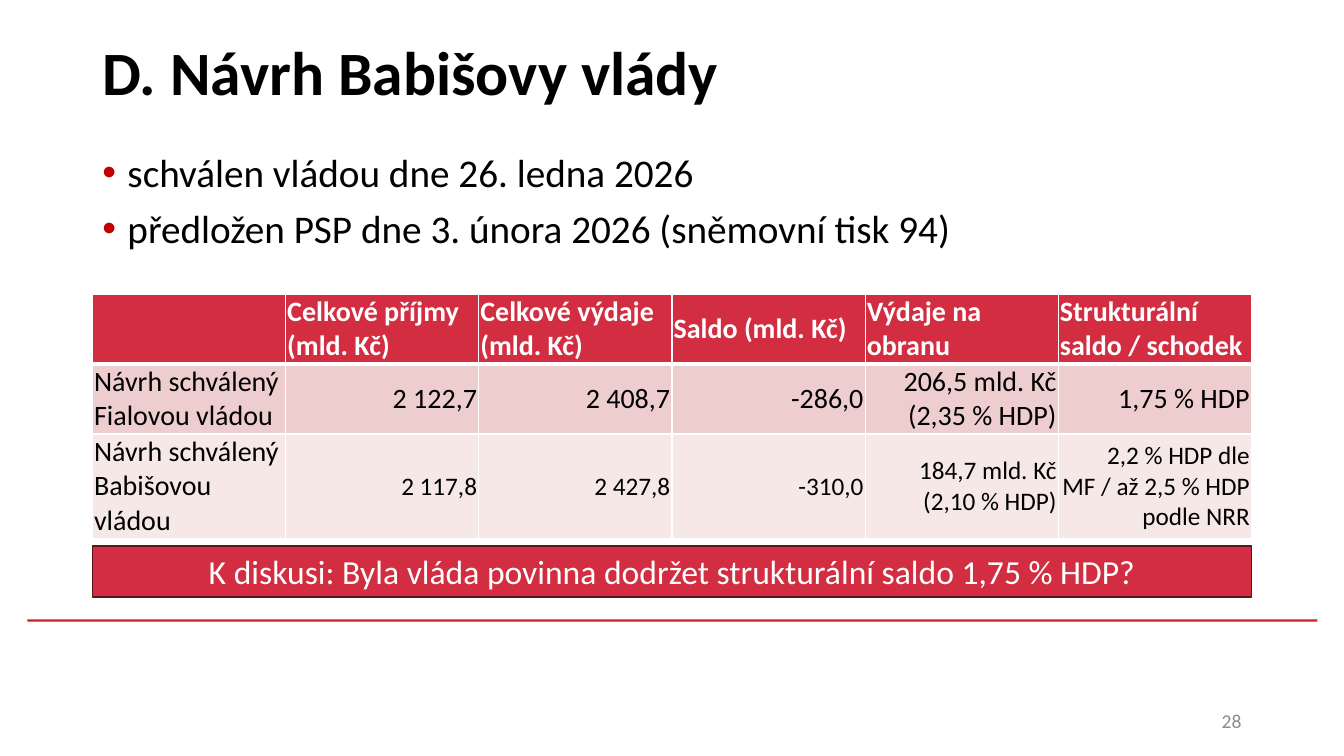
from dataclasses import dataclass

from lxml import etree
from pptx import Presentation
from pptx.dml.color import RGBColor
from pptx.enum import shapes, text
from pptx.oxml import ns
from pptx.util import Pt

FONT = "Calibri"
RED, WHITE, BLACK = "D22D40", "FFFFFF", "000000"
LEFT, WIDTH = 66, 828
ALIGN = text.PP_ALIGN
ANCHOR = text.MSO_ANCHOR


@dataclass
class Row:
    cells: list[str]
    height: float
    fill: str
    size: float = 20
    color: str = BLACK
    bold: bool = False
    align: ALIGN = ALIGN.RIGHT


@dataclass
class Bar:
    top: float
    height: float
    fill: str
    left: float = LEFT
    width: float = WIDTH
    line: str = ""


ROWS = [
    Row(["", "Celkové příjmy (mld. Kč)", "Celkové výdaje (mld. Kč)",
         "Saldo (mld. Kč)", "Výdaje na obranu",
         "Strukturální saldo / schodek"],
        50, RED, color=WHITE, bold=True, align=ALIGN.LEFT),
    Row(["Návrh schválený Fialovou vládou", "2 122,7", "2 408,7", "-286,0",
         "206,5 mld. Kč (2,35 % HDP)", "1,75 % HDP"], 50, "EECDCF"),
    Row(["Návrh schválený Babišovou vládou", "2 117,8", "2 427,8", "-310,0",
         "184,7 mld. Kč (2,10 % HDP)",
         "2,2 % HDP dle MF / až 2,5 % HDP podle NRR"],
        75, "F7E8E8", size=18),
]
RULE = Bar(442.5, 1.5, "CD1F21", left=19.5, width=921.5)
ASK = Bar(390, 36.5, RED, line="5C141C")


def rgb(code: str) -> RGBColor:
    return RGBColor.from_string(code)


def bullet(para) -> None:
    props = para._p.get_or_add_pPr()
    props.set("marL", str(Pt(18)))
    props.set("indent", str(-Pt(18)))
    color = etree.SubElement(props, ns.qn("a:buClr"))
    etree.SubElement(color, ns.qn("a:srgbClr"), val="C00000")
    etree.SubElement(props, ns.qn("a:buFont"), typeface="Arial")
    etree.SubElement(props, ns.qn("a:buChar"), char="•")


def write(frame, words: str, *, size: float, color: str = BLACK,
          bold: bool = False, align: ALIGN = ALIGN.LEFT,
          dots: bool = False, gap: float = 0, pitch: float = 1) -> None:
    frame.word_wrap = True
    for i, line in enumerate(words.split("\n")):
        para = frame.add_paragraph() if i else frame.paragraphs[0]
        para.alignment = align
        para.line_spacing = pitch
        para.space_before = Pt(gap if i else 0)
        if dots:
            bullet(para)
        run = para.add_run()
        run.text = line
        font = run.font
        font.name, font.size, font.bold = FONT, Pt(size), bold
        font.color.rgb = rgb(color)


def add_box(slide, left: float, top: float, width: float, height: float,
            anchor: ANCHOR = ANCHOR.MIDDLE):
    box = slide.shapes.add_textbox(Pt(left), Pt(top), Pt(width), Pt(height))
    box.text_frame.vertical_anchor = anchor
    return box.text_frame


def add_bar(slide, bar: Bar):
    shape = slide.shapes.add_shape(
        shapes.MSO_SHAPE.RECTANGLE, Pt(bar.left), Pt(bar.top),
        Pt(bar.width), Pt(bar.height))
    shape.shadow.inherit = False
    shape.fill.solid()
    shape.fill.fore_color.rgb = rgb(bar.fill)
    if bar.line:
        shape.line.color.rgb = rgb(bar.line)
        shape.line.width = Pt(1)
    else:
        shape.line.fill.background()
    return shape.text_frame


def edge(cell, top: float, base: float) -> None:
    props = cell._tc.get_or_add_tcPr()
    sides = {"L": 1, "R": 1, "T": top, "B": base}
    for i, (side, width) in enumerate(sides.items()):
        line = etree.Element(ns.qn(f"a:ln{side}"), w=str(Pt(width)))
        fill = etree.SubElement(line, ns.qn("a:solidFill"))
        etree.SubElement(fill, ns.qn("a:srgbClr"), val=WHITE)
        props.insert(i, line)


def add_grid(slide, rows: list[Row], top: float) -> None:
    count = len(rows[0].cells)
    height = sum(row.height for row in rows)
    table = slide.shapes.add_table(
        len(rows), count, Pt(LEFT), Pt(top), Pt(WIDTH), Pt(height)).table
    for col in table.columns:
        col.width = Pt(WIDTH / count)
    for r, row in enumerate(rows):
        table.rows[r].height = Pt(row.height)
        for c, words in enumerate(row.cells):
            cell = table.cell(r, c)
            cell.fill.solid()
            cell.fill.fore_color.rgb = rgb(row.fill)
            edge(cell, 3 if r == 1 else 1, 3 if r == 0 else 1)
            cell.vertical_anchor = ANCHOR.MIDDLE
            cell.margin_left = cell.margin_right = Pt(1.2)
            cell.margin_top = cell.margin_bottom = Pt(0.6)
            if words:
                write(cell.text_frame, words,
                      size=row.size if c else 20, color=row.color,
                      bold=row.bold, align=row.align if c else ALIGN.LEFT)


def main() -> None:
    deck = Presentation()
    deck.slide_width, deck.slide_height = Pt(960), Pt(540)
    slide = deck.slides.add_slide(deck.slide_layouts[6])
    add_bar(slide, RULE)
    write(add_box(slide, LEFT, 1.5, WIDTH, 104.5), "D. Návrh Babišovy vlády",
          size=44, bold=True, pitch=0.9)
    write(add_box(slide, LEFT, 106, WIDTH, 329, ANCHOR.TOP),
          "schválen vládou dne 26. ledna 2026\n"
          "předložen PSP dne 3. února 2026 (sněmovní tisk 94)",
          size=28, dots=True, gap=10, pitch=0.9)
    write(add_box(slide, 678, 500.5, 216, 28.5), "28",
          size=14, color="8C8C8C", align=ALIGN.RIGHT)
    add_grid(slide, ROWS, 210)
    write(add_bar(slide, ASK),
          "K diskusi: Byla vláda povinna dodržet strukturální saldo 1,75 % HDP?",
          size=24, color=WHITE, align=ALIGN.CENTER)
    deck.save("out.pptx")


if __name__ == "__main__":
    main()
